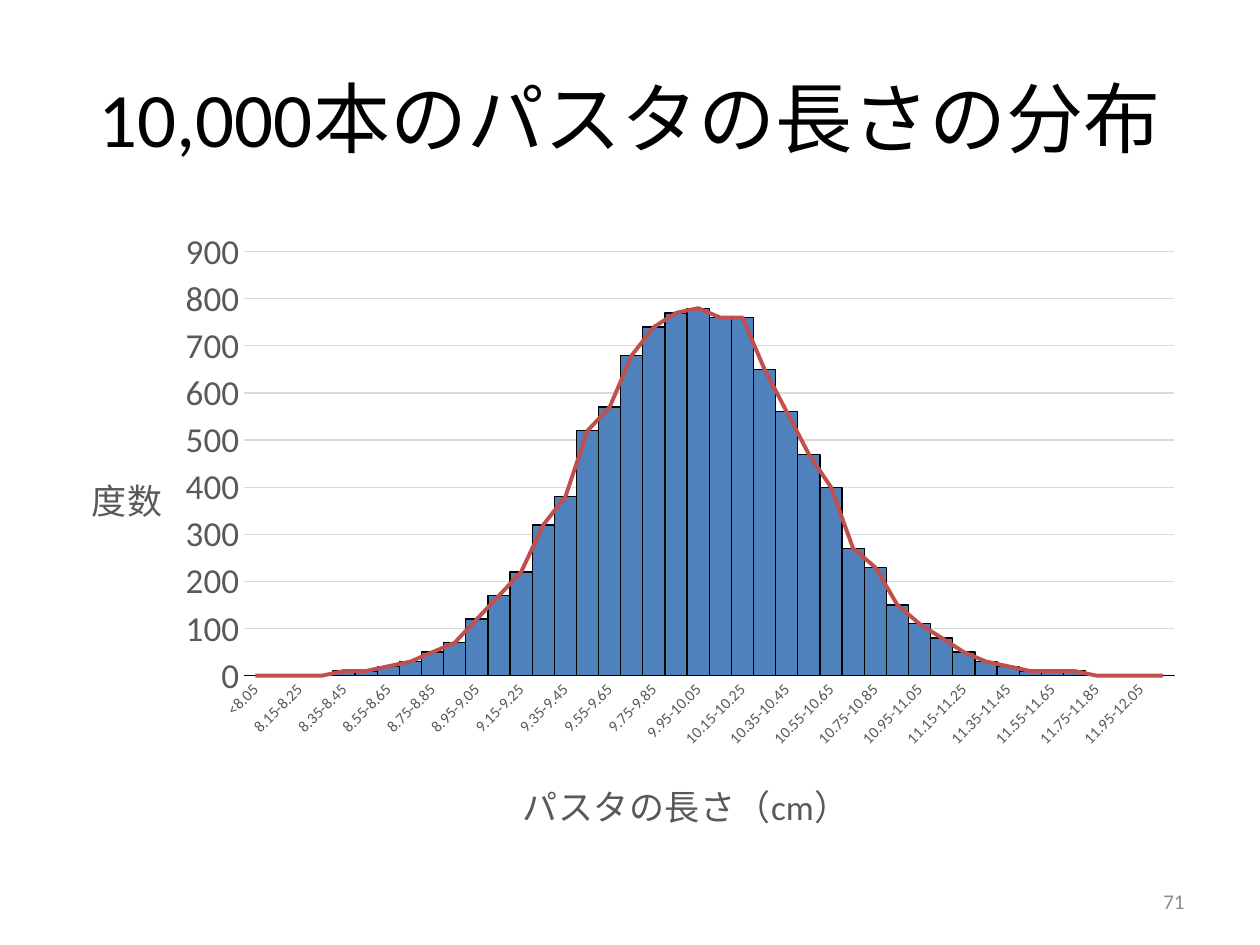
from lxml import etree
from pptx import Presentation
from pptx.chart.data import CategoryChartData
from pptx.dml.color import RGBColor
from pptx.enum.chart import XL_CHART_TYPE, XL_MARKER_STYLE, XL_TICK_MARK
from pptx.enum.text import MSO_ANCHOR, PP_ALIGN
from pptx.oxml import parse_xml
from pptx.oxml.ns import nsdecls, qn
from pptx.util import Inches, Pt

COLUMNS = XL_CHART_TYPE.COLUMN_CLUSTERED
NO_MARKER, NO_TICK = XL_MARKER_STYLE.NONE, XL_TICK_MARK.NONE
MIDDLE = MSO_ANCHOR.MIDDLE
CENTER, RIGHT = PP_ALIGN.CENTER, PP_ALIGN.RIGHT
BLACK = RGBColor(0x00, 0x00, 0x00)
GRAY = RGBColor(0x59, 0x59, 0x59)
PALE = RGBColor(0x8C, 0x8C, 0x8C)
GRID = RGBColor(0xD9, 0xD9, 0xD9)
BLUE = RGBColor(0x4F, 0x81, 0xBD)
RED = RGBColor(0xC0, 0x50, 0x4D)
FONT = "Calibri"

TITLE = "10,000本のパスタの長さの分布"
PAGE = "71"
X_TITLE, Y_TITLE = "パスタの長さ（cm）", "度数"
COUNTS = [0, 0, 0, 0, 10, 10, 20, 30, 50, 70, 120, 170, 220, 320,
          380, 520, 570, 680, 740, 770, 780, 760, 760, 650, 560, 470, 400, 270,
          230, 150, 110, 80, 50, 30, 20, 10, 10, 10, 0, 0, 0, 0]
FIRST, STEP = 8.05, 0.1
EDGES = [f"{FIRST + STEP * i:.2f}" for i in range(len(COUNTS) - 1)]
BINS = ([f"<{EDGES[0]}"] + [f"{a}-{b}" for a, b in zip(EDGES, EDGES[1:])]
        + [f">{EDGES[-1]}"])


def style_font(font, size, color):
    font.name = FONT
    font.size = Pt(size)
    font.bold = False
    font.color.rgb = color


def add_text(s, box, text, size, color, align):
    tf = s.shapes.add_textbox(*map(Inches, box)).text_frame
    tf.word_wrap = True
    tf.vertical_anchor = MIDDLE
    p = tf.paragraphs[0]
    p.text = text
    p.alignment = align
    style_font(p.font, size, color)


def place(element, index, **shares):
    for old in element.findall(qn("c:layout")):
        element.remove(old)
    layout = parse_xml(f"<c:layout {nsdecls('c')}><c:manualLayout/></c:layout>")
    values = {}
    if "w" in shares:
        values["layoutTarget"] = "inner"
    values.update(xMode="edge", yMode="edge", **shares)
    for tag, value in values.items():
        etree.SubElement(layout[0], qn(f"c:{tag}")).set("val", str(value))
    element.insert(index, layout)


def style_axis(axis, title, x, y, size):
    tf = axis.axis_title.text_frame
    tf.text = title
    style_font(tf.paragraphs[0].font, 20, GRAY)
    tf._txBody.bodyPr.set("rot", "0")
    place(axis.axis_title._element, 1, x=x, y=y)
    axis.major_tick_mark = axis.minor_tick_mark = NO_TICK
    style_font(axis.tick_labels.font, size, GRAY)


def move_to_line(chart):
    bar = chart._chartSpace.find(".//" + qn("c:barChart"))
    line = parse_xml(f'<c:lineChart {nsdecls("c")}><c:grouping val="standard"/>'
                     '<c:varyColors val="0"/></c:lineChart>')
    ser = bar.findall(qn("c:ser"))[1]
    for invert in ser.findall(qn("c:invertIfNegative")):
        ser.remove(invert)
    line.append(ser)
    etree.SubElement(line, qn("c:marker")).set("val", "1")
    for ax in bar.findall(qn("c:axId")):
        etree.SubElement(line, qn("c:axId")).set("val", ax.get("val"))
    bar.addnext(line)


def add_histogram(s, box):
    data = CategoryChartData()
    data.categories = BINS
    for name in ("Series 1", "Series 2"):
        data.add_series(name, COUNTS)
    chart = s.shapes.add_chart(COLUMNS, *map(Inches, box), data).chart
    chart.has_legend = chart.has_title = False
    style_font(chart.font, 10, BLACK)
    move_to_line(chart)
    place(chart._chartSpace.chart.plotArea, 0, x=0.16, y=0.05, w=0.82, h=0.68)

    bars, curve = chart.plots
    bars.gap_width = 0
    bars.vary_by_categories = False
    columns, line = bars.series[0], curve.series[0]
    columns.format.fill.solid()
    columns.format.fill.fore_color.rgb = BLUE
    line.smooth = False
    line.marker.style = NO_MARKER

    x_axis, y_axis = chart.category_axis, chart.value_axis
    style_axis(x_axis, X_TITLE, 0.4, 0.88, 9)
    style_axis(y_axis, Y_TITLE, 0.02, 0.39, 20)
    labels = x_axis._element.find(qn("c:txPr"))
    labels.find(qn("a:bodyPr")).set("rot", "-2700000")
    skip = parse_xml(f'<c:tickLblSkip {nsdecls("c")} val="2"/>')
    x_axis._element.find(qn("c:noMultiLvlLbl")).addprevious(skip)
    y_axis.minimum_scale, y_axis.maximum_scale, y_axis.major_unit = 0, 900, 100
    y_axis.format.line.fill.background()

    for fmt, color, width in (
        (columns.format, BLACK, 0.75),
        (line.format, RED, 2.25),
        (x_axis.format, GRID, 0.75),
        (y_axis.major_gridlines.format, GRID, 0.75),
    ):
        fmt.line.color.rgb = color
        fmt.line.width = Pt(width)


def main():
    prs = Presentation()
    prs.slide_width, prs.slide_height = Inches(10), Inches(7.5)
    s = prs.slides.add_slide(prs.slide_layouts[6])
    add_text(s, (0.5, 0.3, 9, 1.25), TITLE, 44, BLACK, CENTER)
    add_text(s, (7.17, 6.95, 2.33, 0.4), PAGE, 12, PALE, RIGHT)
    add_histogram(s, (0.5, 1.75, 9, 4.95))
    prs.save("out.pptx")


if __name__ == "__main__":
    main()
